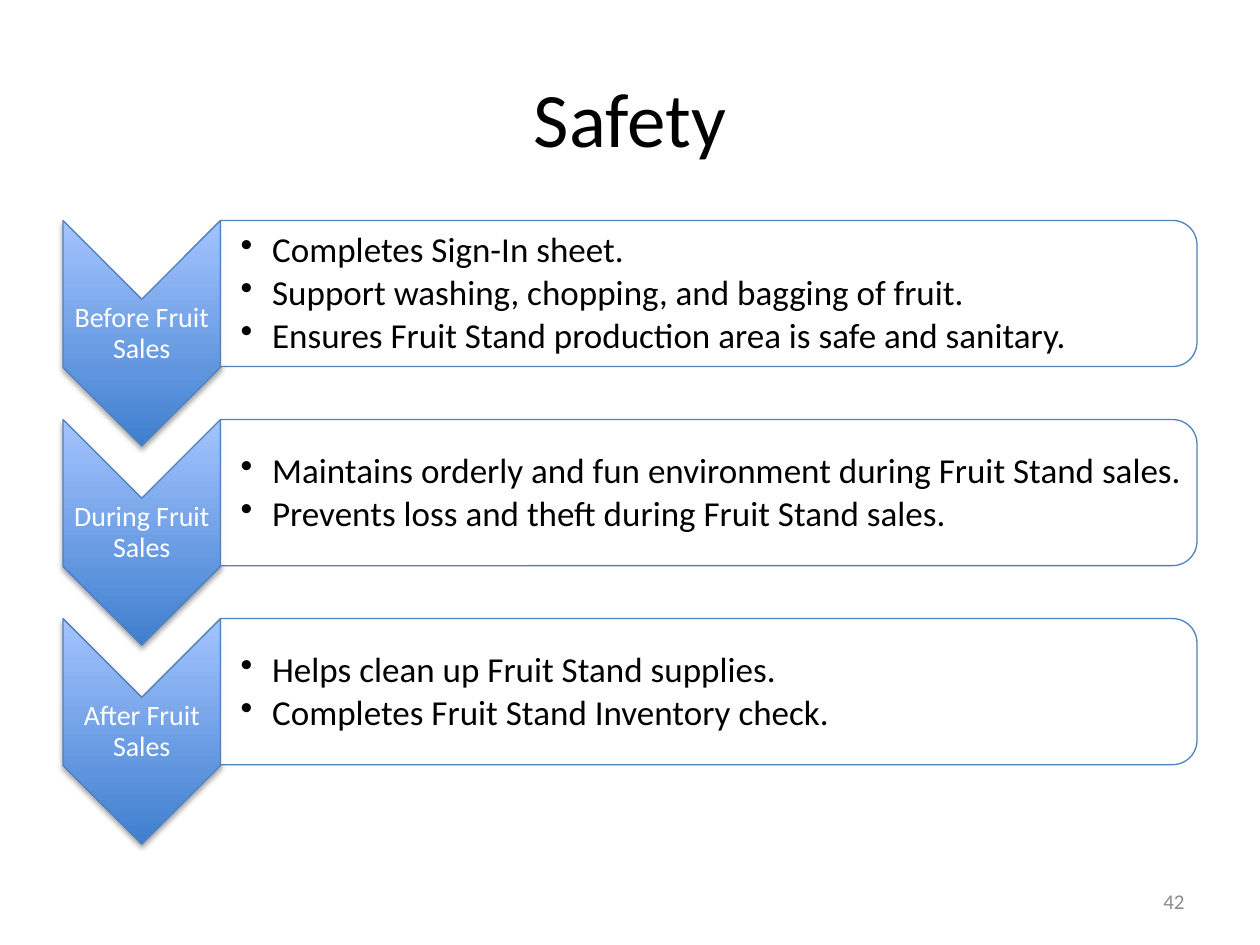
import pptx
import pptx.dml.color
import pptx.enum.shapes
import pptx.enum.text
import pptx.oxml
import pptx.oxml.ns
import pptx.util
from dataclasses import dataclass

Inches = pptx.util.Inches
Pt = pptx.util.Pt
Shapes = pptx.enum.shapes.MSO_SHAPE
Align = pptx.enum.text.PP_ALIGN
Anchor = pptx.enum.text.MSO_ANCHOR


@dataclass(frozen=True)
class Theme:
    font: str = "Calibri"
    ink: str = "000000"
    light: str = "FFFFFF"
    muted: str = "8C8C8C"
    outline: str = "4F81BD"
    gradient_bottom: str = "3F7FCE"
    gradient_top: str = "A4C4FF"
    title_size: int = 44
    list_size: int = 20
    label_size: int = 16
    number_size: int = 12


THEME = Theme()

STAGES = [
    ("Before Fruit Sales", [
        "Completes Sign-In sheet.",
        "Support washing, chopping, and bagging of fruit.",
        "Ensures Fruit Stand production area is safe and sanitary.",
    ]),
    ("During Fruit Sales", [
        "Maintains orderly and fun environment during Fruit Stand sales.",
        "Prevents loss and theft during Fruit Stand sales.",
    ]),
    ("After Fruit Sales", [
        "Helps clean up Fruit Stand supplies.",
        "Completes Fruit Stand Inventory check.",
    ]),
]

LEFT = 0.5
FIRST_TOP = 1.75
STAGE_STEP = 1.58
CHEVRON_WIDTH, CHEVRON_HEIGHT = 1.25, 1.79
PANEL_WIDTH, PANEL_HEIGHT = 7.75, 1.16


def rgb(color):
    return pptx.dml.color.RGBColor.from_string(color)


def xml(markup):
    namespace = pptx.oxml.ns.nsdecls("a")
    return pptx.oxml.parse_xml(markup.replace(">", f" {namespace}>", 1))


def write_text(shape, lines, size, color, align=Align.LEFT, margins=None,
               line_spacing=None, space_after=0, bullets=False):
    frame = shape.text_frame
    frame.word_wrap = True
    frame.vertical_anchor = Anchor.MIDDLE
    if margins:
        (frame.margin_left, frame.margin_top,
         frame.margin_right, frame.margin_bottom) = map(Inches, margins)
    frame.text = "\n".join(lines)
    for paragraph in frame.paragraphs:
        paragraph.alignment = align
        paragraph.line_spacing = line_spacing
        paragraph.space_after = Pt(space_after)
        paragraph.font.name = THEME.font
        paragraph.font.size = Pt(size)
        paragraph.font.color.rgb = rgb(color)
        if bullets:
            add_bullet(paragraph)


def add_bullet(paragraph):
    properties = paragraph._p.get_or_add_pPr()
    properties.set("marL", str(Inches(0.25)))
    properties.set("indent", str(Inches(-0.25)))
    bullet = xml('<a:buChar char="•"></a:buChar>')
    properties.insert_element_before(bullet, "a:tabLst", "a:defRPr", "a:extLst")


def add_text(slide, lines, left, top, width, height, **text_format):
    box = slide.shapes.add_textbox(
        Inches(left), Inches(top), Inches(width), Inches(height))
    write_text(box, lines, **text_format)


def add_turned_shape(slide, kind, left, top, width, height):
    offset = (width - height) / 2
    shape = slide.shapes.add_shape(
        kind, Inches(left + offset), Inches(top - offset),
        Inches(height), Inches(width))
    shape.rotation = 90
    shape.shadow.inherit = False
    shape.line.color.rgb = rgb(THEME.outline)
    shape.line.width = Pt(0.75)
    return shape


def add_chevron(slide, top):
    chevron = add_turned_shape(
        slide, Shapes.CHEVRON, LEFT, top, CHEVRON_WIDTH, CHEVRON_HEIGHT)
    chevron.fill.gradient()
    chevron.fill.gradient_angle = 90
    colors = (THEME.gradient_bottom, THEME.gradient_top)
    for stop, color, position in zip(chevron.fill.gradient_stops, colors, (0, 1)):
        stop.color.rgb = rgb(color)
        stop.position = position
    properties = chevron._element.spPr
    properties.find(pptx.oxml.ns.qn("a:gradFill")).set("rotWithShape", "0")
    properties.find(pptx.oxml.ns.qn("a:effectLst")).append(xml(
        f'<a:outerShdw blurRad="{Pt(3.1)}" dist="{Pt(1.8)}" dir="5400000" rotWithShape="0">'
        f'<a:srgbClr val="{THEME.ink}"><a:alpha val="35000"/></a:srgbClr></a:outerShdw>'))


def add_panel(slide, top):
    panel = add_turned_shape(
        slide, Shapes.ROUND_2_SAME_RECTANGLE, LEFT + CHEVRON_WIDTH, top,
        PANEL_WIDTH, PANEL_HEIGHT)
    panel.fill.solid()
    panel.fill.fore_color.rgb = rgb(THEME.light)
    color = panel._element.spPr.find(".//" + pptx.oxml.ns.qn("a:srgbClr"))
    color.append(xml('<a:alpha val="90000"></a:alpha>'))


def add_stage(slide, top, label, duties):
    add_chevron(slide, top)
    add_text(slide, [label], LEFT, top + 0.63, CHEVRON_WIDTH, 0.54,
             size=THEME.label_size, color=THEME.light, align=Align.CENTER,
             margins=(0.01,) * 4, line_spacing=0.9, space_after=5.6)
    add_panel(slide, top)
    add_text(slide, duties, LEFT + CHEVRON_WIDTH, top + 0.06, 7.69, 1.05,
             size=THEME.list_size, color=THEME.ink,
             margins=(0.16, 0.01, 0.01, 0.01), line_spacing=0.9,
             space_after=3, bullets=True)


def add_title(slide, text):
    title = slide.shapes.title
    title.left, title.top = Inches(0.5), Inches(0.3)
    title.width, title.height = Inches(9), Inches(1.25)
    write_text(title, [text], size=THEME.title_size, color=THEME.ink,
               align=Align.CENTER)


def main():
    presentation = pptx.Presentation()
    presentation.slide_width = Inches(10)
    presentation.slide_height = Inches(7.5)
    slide = presentation.slides.add_slide(presentation.slide_layouts[5])
    add_title(slide, "Safety")
    for index, (label, duties) in enumerate(STAGES):
        add_stage(slide, FIRST_TOP + index * STAGE_STEP, label, duties)
    add_text(slide, ["42"], 7.17, 6.95, 2.33, 0.4, size=THEME.number_size,
             color=THEME.muted, align=Align.RIGHT)
    presentation.save("out.pptx")


if __name__ == "__main__":
    main()
